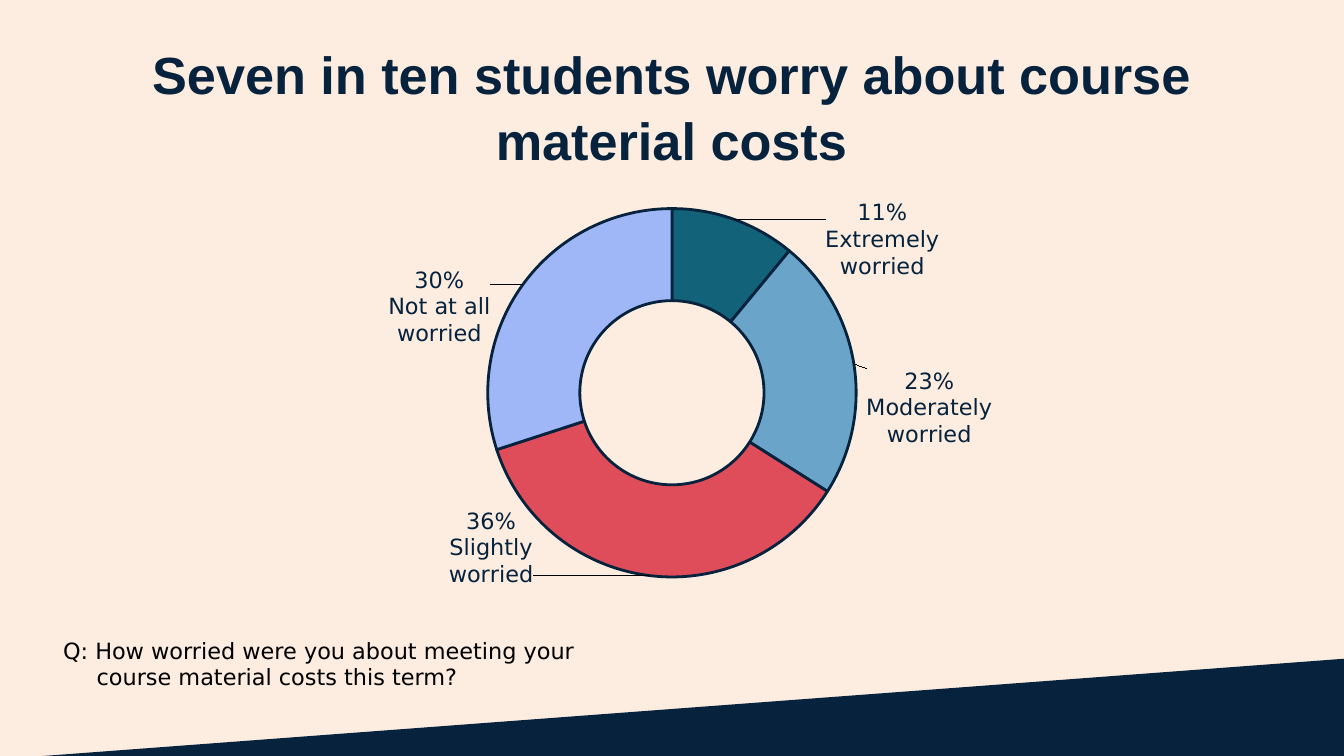
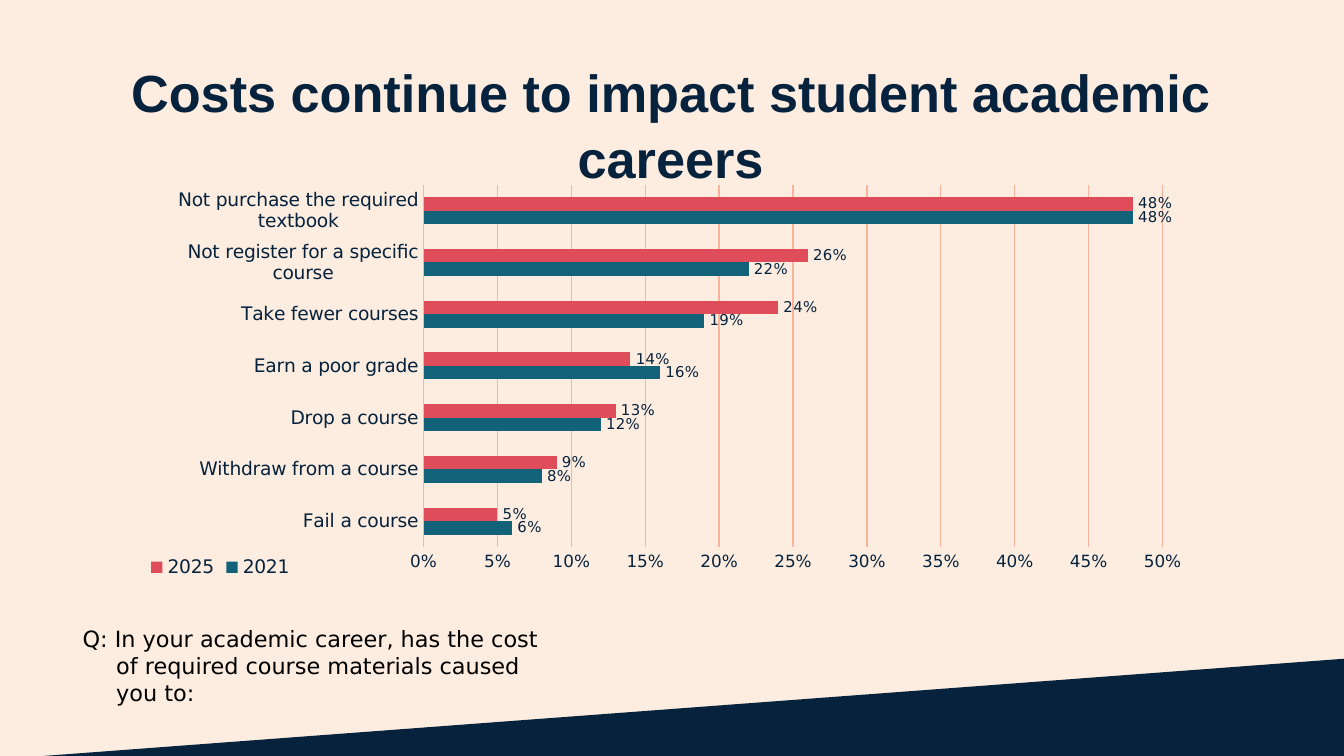
from lxml.etree import SubElement
from pptx import Presentation
from pptx.chart.data import CategoryChartData
from pptx.dml.color import RGBColor
from pptx.enum.chart import (XL_CHART_TYPE, XL_LABEL_POSITION, XL_LEGEND_POSITION,
                             XL_TICK_MARK)
from pptx.enum.shapes import MSO_SHAPE
from pptx.enum.text import MSO_ANCHOR, MSO_AUTO_SIZE, PP_ALIGN
from pptx.oxml.ns import qn
from pptx.util import Pt

PX = 9525  # EMU, 96 px to the inch
COLORS = {
    "cream": "FCEDE0", "navy": "06223D", "black": "000000", "teal": "126279",
    "sky": "6AA4C8", "red": "DE4D59", "lilac": "9FB7F6", "peach": "FCB39C",
    "chart text": "376DB1",
}
TITLE_FONT, BODY_FONT = "Arial", "DejaVu Sans"


def style_font(font, size, color, name=BODY_FONT):
    font.size = Pt(size)
    font.name = name
    font.color.rgb = RGBColor.from_string(COLORS[color])


def set_layout(parent, index, **values):
    """Give a chart part a manual layout, as child number index."""
    for old in parent.findall(qn("c:layout")):
        parent.remove(old)
    layout = SubElement(parent, qn("c:layout"))
    parent.insert(index, layout)
    manual = SubElement(layout, qn("c:manualLayout"))
    for name, value in values.items():
        SubElement(manual, qn(f"c:{name}")).set("val", str(value))


presentation = Presentation()
presentation.slide_width, presentation.slide_height = 960 * PX, 540 * PX
background = presentation.slide_master.background.fill
background.solid()
background.fore_color.rgb = RGBColor.from_string(COLORS["cream"])

worry_data = CategoryChartData(number_format="0%")
worry_data.categories = ["1", "2", "3", "4"]
worry_data.add_series("Series 1", (0.11, 0.23, 0.36, 0.3))

impact_data = CategoryChartData(number_format="0%")
impact_data.categories = [
    "Fail a course", "Withdraw from a course", "Drop a course",
    "Earn a poor grade", "Take fewer courses",
    "Not register for a specific course", "Not purchase the required textbook",
]
impact_data.add_series("2021", (0.06, 0.08, 0.12, 0.16, 0.19, 0.22, 0.48))
impact_data.add_series("2025", (0.05, 0.09, 0.13, 0.14, 0.24, 0.26, 0.48))

# title, title box, question, question box, chart type, data, chart box, plot area
SLIDES = [
    ("Seven in ten students worry about course material costs", (76, 16, 807, 57),
     "Q: How worried were you about meeting your course material costs this term?",
     (11, 437, 455, 74),
     XL_CHART_TYPE.DOUGHNUT, worry_data, (226, 126, 508, 329), (0.2, 0.07, 0.6, 0.8)),
    ("Costs continue to impact student academic careers", (40, 29, 878, 57),
     "Q: In your academic career, has the cost of required course materials "
     "caused you to:",
     (25, 449, 371, 53),
     XL_CHART_TYPE.BAR_CLUSTERED, impact_data, (96, 117, 765, 301),
     (0.27, 0.05, 0.69, 0.86)),
]

charts = []
for (title_text, title_box, question, question_box,
     chart_type, chart_data, chart_box, plot_box) in SLIDES:
    slide = presentation.slides.add_slide(presentation.slide_layouts[5])

    band = slide.shapes.add_shape(MSO_SHAPE.RIGHT_TRIANGLE,
                                  -35 * PX, 470 * PX, 1003 * PX, 75 * PX)
    band.shadow.inherit = False
    band.fill.solid()
    band.fill.fore_color.rgb = RGBColor.from_string(COLORS["navy"])
    band.line.fill.background()
    band._element.spPr.find(qn("a:xfrm")).set("flipH", "1")

    title = slide.shapes.title
    title.left, title.top, title.width, title.height = (n * PX for n in title_box)
    textbox = slide.shapes.add_textbox(*(n * PX for n in question_box))
    for shape, anchor in ((title, MSO_ANCHOR.TOP), (textbox, MSO_ANCHOR.MIDDLE)):
        frame = shape.text_frame
        frame.word_wrap = True
        frame.auto_size = MSO_AUTO_SIZE.NONE
        frame.vertical_anchor = anchor
        frame.margin_left = frame.margin_right = 10 * PX
        frame.margin_top = frame.margin_bottom = 10 * PX

    title.text_frame.margin_top = 12 * PX
    paragraph = title.text_frame.paragraphs[0]
    paragraph.alignment = PP_ALIGN.CENTER
    paragraph.line_spacing = 1.05
    run = paragraph.add_run()
    run.text = title_text
    style_font(run.font, 28, "navy", TITLE_FONT)
    run.font.bold = True

    paragraph = textbox.text_frame.paragraphs[0]
    properties = paragraph._p.get_or_add_pPr()
    properties.set("marL", str(48 * PX))
    properties.set("indent", str(-24 * PX))
    run = paragraph.add_run()
    run.text = question
    style_font(run.font, 12, "black")

    chart = slide.shapes.add_chart(chart_type, *(n * PX for n in chart_box),
                                   chart_data).chart
    chart.has_title = False
    chart.has_legend = False
    style_font(chart.font, 10, "chart text", TITLE_FONT)
    left, top, width, height = plot_box
    set_layout(chart._chartSpace.find(".//" + qn("c:plotArea")), 0,
               layoutTarget="inner", xMode="edge", yMode="edge",
               x=left, y=top, w=width, h=height)
    charts.append(chart)

worry_chart, impact_chart = charts

# Doughnut: slice colours and labels moved outside the ring
worry_plot = worry_chart.plots[0]
worry_plot.vary_by_categories = True
worry_plot._element.find(qn("c:holeSize")).set("val", "75")
worry_series = worry_plot.series[0]
labels = worry_series.data_labels
labels.show_value = True
labels.number_format = "0%"
labels.number_format_is_linked = False
style_font(labels.font, 12, "navy")

# colour, percentage, answer, label shift as a fraction of the chart
SLICES = [
    ("teal", "11%", "Extremely worried", 0.23, -0.05),
    ("sky", "23%", "Moderately worried", 0.17, 0.08),
    ("red", "36%", "Slightly worried", -0.23, 0.04),
    ("lilac", "30%", "Not at all worried", -0.17, -0.01),
]
for index, (color, percentage, answer, shift_x, shift_y) in enumerate(SLICES):
    point = worry_series.points[index]
    point.format.fill.solid()
    point.format.fill.fore_color.rgb = RGBColor.from_string(COLORS[color])
    point.format.line.color.rgb = RGBColor.from_string(COLORS["navy"])
    point.format.line.width = Pt(1.5)
    frame = point.data_label.text_frame
    frame.word_wrap = True
    for paragraph, text in ((frame.paragraphs[0], percentage),
                            (frame.add_paragraph(), answer)):
        run = paragraph.add_run()
        run.text = text
        style_font(run.font, 12, "navy")
for label, (*_, shift_x, shift_y) in zip(
        worry_series._element.iter(qn("c:dLbl")), SLICES):
    set_layout(label, 1, x=shift_x, y=shift_y)

# Bars: two years for each effect of costs
impact_plot = impact_chart.plots[0]
impact_plot.vary_by_categories = False
impact_plot.gap_width = 182
impact_plot.overlap = 0
for series, color in zip(impact_plot.series, ("teal", "red")):
    series.format.fill.solid()
    series.format.fill.fore_color.rgb = RGBColor.from_string(COLORS[color])
    labels = series.data_labels
    labels.show_value = True
    labels.position = XL_LABEL_POSITION.OUTSIDE_END
    labels.number_format = "0%"
    labels.number_format_is_linked = False
    style_font(labels.font, 8, "navy")

category_axis, value_axis = impact_chart.category_axis, impact_chart.value_axis
for axis, size in ((category_axis, 10), (value_axis, 9)):
    axis.major_tick_mark = axis.minor_tick_mark = XL_TICK_MARK.NONE
    style_font(axis.tick_labels.font, size, "navy")
value_axis.minimum_scale, value_axis.maximum_scale = 0, 0.5
value_axis.major_unit = 0.05
value_axis.has_major_gridlines = True
value_axis.tick_labels.number_format = "0%"
value_axis.tick_labels.number_format_is_linked = False
value_axis.format.line.fill.background()
for line in (category_axis.format.line, value_axis.major_gridlines.format.line):
    line.color.rgb = RGBColor.from_string(COLORS["peach"])
    line.width = Pt(0.75)

impact_chart.has_legend = True
legend = impact_chart.legend
legend.position = XL_LEGEND_POSITION.BOTTOM
legend.include_in_layout = False
style_font(legend.font, 10, "navy")
set_layout(legend._element, 1, xMode="edge", yMode="edge", x=0.01, y=0.92)

presentation.save("out.pptx")
